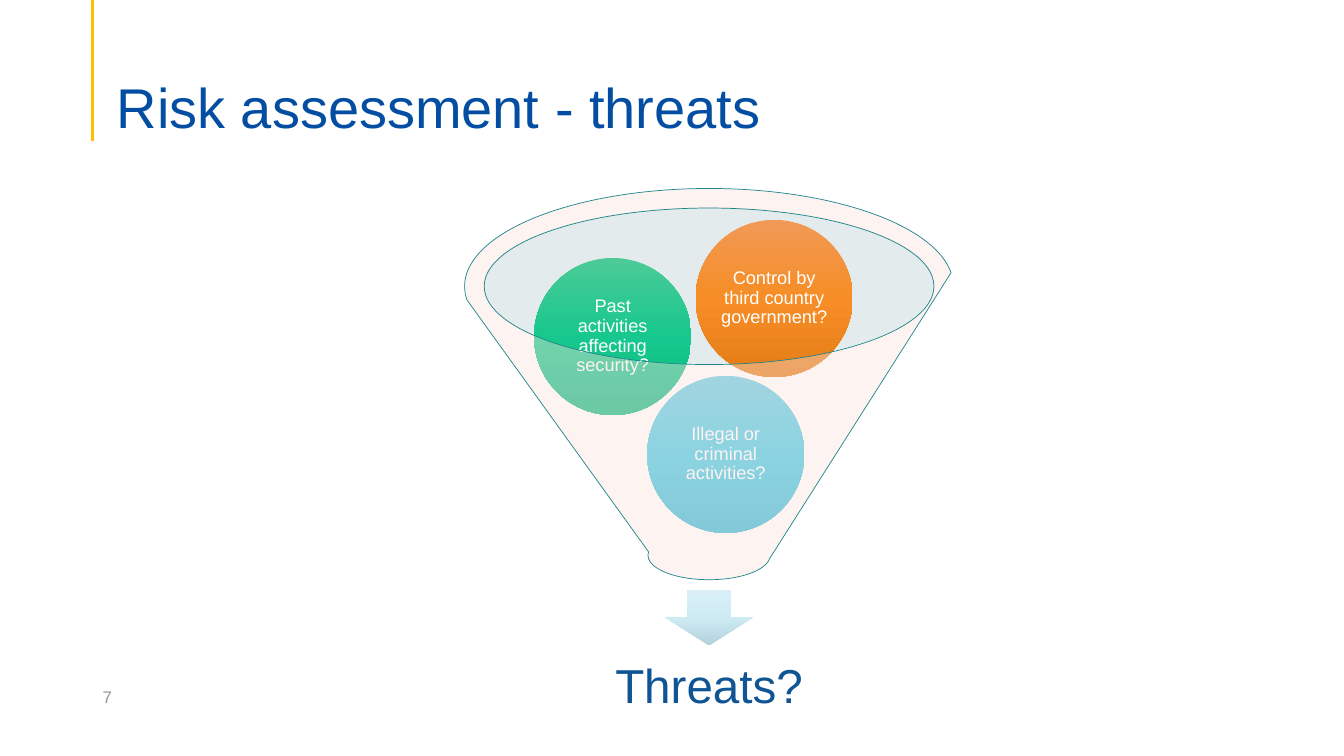
from copy import deepcopy

from lxml.etree import SubElement
from pptx import Presentation
from pptx.dml.color import RGBColor
from pptx.enum.shapes import MSO_CONNECTOR, MSO_SHAPE
from pptx.enum.text import MSO_ANCHOR as Anchor, PP_ALIGN as Align
from pptx.oxml.ns import qn
from pptx.util import Cm, Pt

FONT = "Arial"
COLORS = {
    "accent": "FFC000", "title": "034EA2", "result": "0F5494", "number": "979797",
    "white": "FFFFFF", "rim": "BDCED0", "funnel": "FAE2DD", "outline": "1E858B",
}
GRADIENTS = {
    "blue": ("66CCE3", "44CAE5", "34B9D4"),
    "green": ("4ECA98", "16C88D", "0CB97F"),
    "orange": ("F19A56", "F68D26", "E57D17"),
    "arrow": ("D9EFF5", "CEEBF4", "B4D2DC"),
}
BALL_SIZE = 3.96
# Offsets are measured from the funnel's top left corner, in centimetres.
BALLS = [
    ("Illegal or criminal activities?", "blue", 4.6, 4.72),
    ("Past activities affecting security?", "green", 1.75, 1.75),
    ("Control by third country government?", "orange", 5.82, 0.79),
]


def rgb(name):
    return RGBColor.from_string(COLORS[name])


def write(shape, text, size, color, align=Align.LEFT, anchor=Anchor.MIDDLE,
          margins=(0.25, 0.13, 0.25, 0.13), line_spacing=0.9):
    frame = shape.text_frame
    frame.text = text
    frame.word_wrap = True
    frame.vertical_anchor = anchor
    (frame.margin_left, frame.margin_top,
     frame.margin_right, frame.margin_bottom) = map(Cm, margins)
    paragraph = frame.paragraphs[0]
    paragraph.alignment = align
    paragraph.line_spacing = line_spacing
    font = paragraph.runs[0].font
    font.name, font.size, font.color.rgb = FONT, Pt(size), rgb(color)


def add_plain_shape(slide, kind, left, top, width, height):
    """Add a preset shape without shadow or line, placed in centimetres."""
    shape = slide.shapes.add_shape(kind, *map(Cm, (left, top, width, height)))
    shape.shadow.inherit = False
    shape.line.fill.background()
    return shape


def fill_translucent(shape, color, percent):
    shape.fill.solid()
    shape.fill.fore_color.rgb = rgb(color)
    color_element = shape.element.spPr.find(qn("a:solidFill"))[0]
    SubElement(color_element, qn("a:alpha")).set("val", str(percent * 1000))


def fill_downward(shape, gradient):
    """Fill with a three-stop gradient that runs from top to bottom."""
    fill = shape.fill
    fill.gradient()
    fill.gradient_angle = 270
    stop_list = shape.element.spPr.find(f".//{qn('a:gsLst')}")
    stop_list.append(deepcopy(stop_list[0]))
    for index, (stop, color) in enumerate(zip(fill.gradient_stops, GRADIENTS[gradient])):
        stop.position = index / 2
        stop.color.rgb = RGBColor.from_string(color)


def add_header(slide, left, top, width, height):
    """Place the title in the box, with the accent rule to its left."""
    rule_x = Cm(left - 0.35)
    rule = slide.shapes.add_connector(MSO_CONNECTOR.STRAIGHT, rule_x, 0, rule_x, Cm(top + height))
    rule.line.color.rgb = rgb("accent")
    rule.line.width = Pt(2.25)
    SubElement(rule.element.spPr, qn("a:effectLst"))
    title = slide.shapes.title
    title.left, title.top, title.width, title.height = map(Cm, (left, top, width, height))
    write(title, "Risk assessment - threats", 40, "title", anchor=Anchor.BOTTOM,
          margins=(0.25, 0.13, 0.25, 0))


def add_funnel(slide, left, top, width, height):
    """Draw the funnel in the box, its balls inside it and the result below."""
    center = left + width / 2
    bottom = top + height
    inset = 0.48
    rim = add_plain_shape(slide, MSO_SHAPE.OVAL, left + inset, top + inset,
                          width - 2 * inset, 3.94)
    fill_translucent(rim, "rim", 40)

    arrow_width = 2.21
    arrow = add_plain_shape(slide, MSO_SHAPE.DOWN_ARROW, center - arrow_width / 2,
                            bottom + 0.25, arrow_width, 1.4)
    fill_downward(arrow, "arrow")

    result_width = 10.54
    result = slide.shapes.add_textbox(
        *map(Cm, (center - result_width / 2, bottom + 1.4, result_width, 2.64)))
    write(result, "Threats?", 34, "result", Align.CENTER, margins=(0.66,) * 4)

    for text, gradient, x, y in BALLS:
        ball = add_plain_shape(slide, MSO_SHAPE.OVAL, left + x, top + y, BALL_SIZE, BALL_SIZE)
        fill_downward(ball, gradient)
        write(ball, text, 13, "white", Align.CENTER, margins=(0.05,) * 4)

    funnel = add_plain_shape(slide, MSO_SHAPE.FUNNEL, left, top, width, height)
    fill_translucent(funnel, "funnel", 40)
    funnel.line.color.rgb = rgb("outline")
    funnel.line.width = Pt(0.5)


def add_page_number(slide, left, top, width, height):
    number = slide.shapes.add_textbox(*map(Cm, (left, top, width, height)))
    write(number, "7", 12, "number", line_spacing=1.0)


def main():
    presentation = Presentation()
    presentation.slide_width, presentation.slide_height = Cm(33.87), Cm(19.05)
    slide = presentation.slides.add_slide(presentation.slide_layouts[5])
    add_header(slide, 2.69, 1.35, 29.21, 2.2)
    add_funnel(slide, 11.71, 4.75, 12.32, 9.86)
    add_page_number(slide, 2.34, 17.04, 7.62, 1.02)
    presentation.save("out.pptx")


if __name__ == "__main__":
    main()
